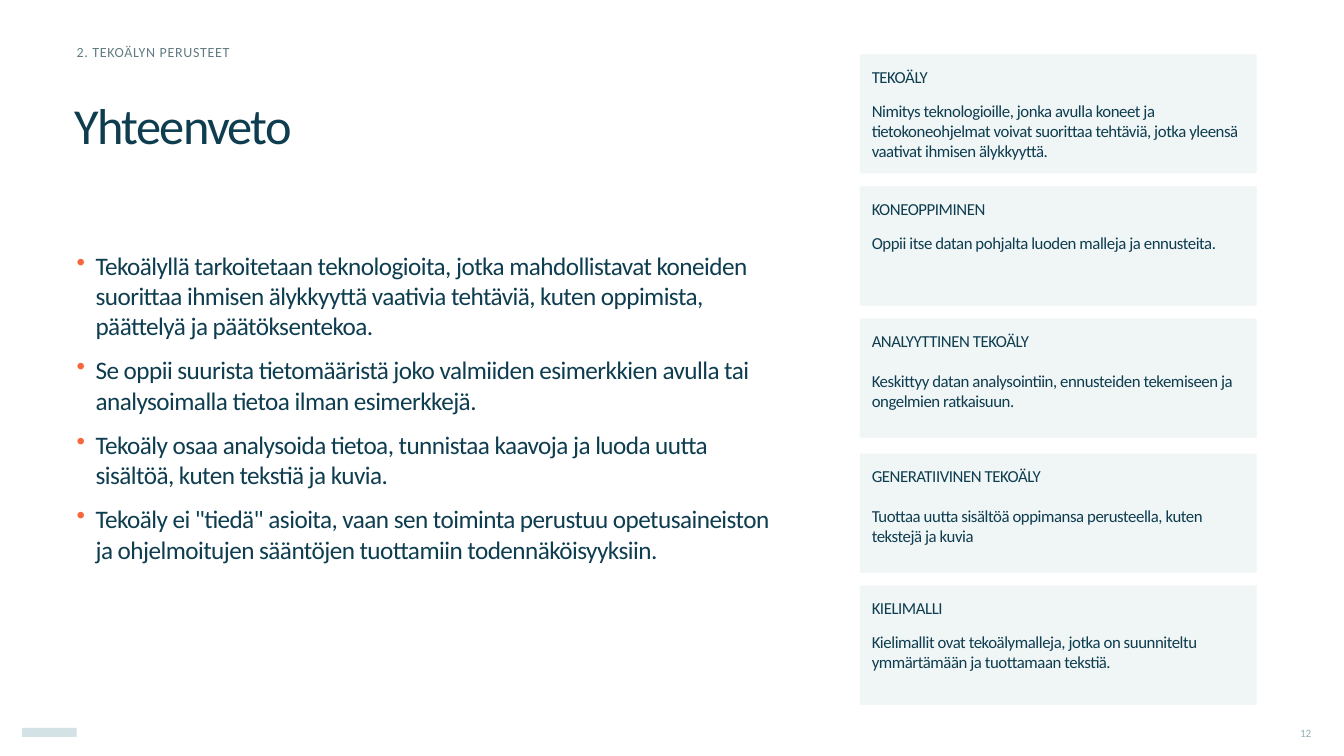
from lxml.etree import SubElement
from pptx import Presentation
from pptx.dml.color import RGBColor
from pptx.enum.shapes import MSO_SHAPE
from pptx.enum.text import MSO_ANCHOR, PP_ALIGN
from pptx.oxml.ns import qn
from pptx.util import Cm, Pt

FONT = "Calibri"
NAVY = RGBColor(0x0E, 0x3D, 0x50)
SLATE = RGBColor(0x63, 0x7C, 0x83)
MIST = RGBColor(0x92, 0xB1, 0xB8)
PALE = RGBColor(0xD3, 0xE3, 0xE5)
CARD = RGBColor(0xF0, 0xF5, 0xF5)
ORANGE = RGBColor(0xF7, 0x67, 0x3B)

CARD_LEFT, CARD_TOP, CARD_GAP = 21.67, 1.37, 0.33
CARD_INSET = 0.3

SUMMARY = [
    "Tekoälyllä tarkoitetaan teknologioita, jotka mahdollistavat koneiden suorittaa ihmisen "
    "älykkyyttä vaativia tehtäviä, kuten oppimista, päättelyä ja päätöksentekoa.",
    "Se oppii suurista tietomääristä joko valmiiden esimerkkien avulla tai analysoimalla "
    "tietoa ilman esimerkkejä.",
    "Tekoäly osaa analysoida tietoa, tunnistaa kaavoja ja luoda uutta sisältöä, kuten "
    "tekstiä ja kuvia.",
    'Tekoäly ei "tiedä" asioita, vaan sen toiminta perustuu opetusaineiston ja ohjelmoitujen '
    "sääntöjen tuottamiin todennäköisyyksiin.",
]

# Term, definition, card height in cm, gap before the definition in points
TERMS = [
    ("TEKOÄLY",
     "Nimitys teknologioille, jonka avulla koneet ja tietokoneohjelmat voivat suorittaa "
     "tehtäviä, jotka yleensä vaativat ihmisen älykkyyttä.", 3, 10),
    ("KONEOPPIMINEN",
     "Oppii itse datan pohjalta luoden malleja ja ennusteita.", 3, 10),
    ("ANALYYTTINEN TEKOÄLY",
     "Keskittyy datan analysointiin, ennusteiden tekemiseen ja ongelmien ratkaisuun.",
     3.07, 14.5),
    ("GENERATIIVINEN TEKOÄLY",
     "Tuottaa uutta sisältöä oppimansa perusteella, kuten tekstejä ja kuvia", 3, 14.5),
    ("KIELIMALLI",
     "Kielimallit ovat tekoälymalleja, jotka on suunniteltu ymmärtämään ja tuottamaan "
     "tekstiä.", 3, 10),
]


def add_bullet(para):
    properties = para._p.get_or_add_pPr()
    properties.set("marL", str(Cm(0.48)))
    properties.set("indent", str(-Cm(0.48)))
    color = SubElement(properties, qn("a:buClr"))
    SubElement(color, qn("a:srgbClr")).set("val", str(ORANGE))
    SubElement(properties, qn("a:buChar")).set("char", "•")


def write(shape, texts, size, color=NAVY, tracking=0, gap=0, line_spacing=None,
          align=PP_ALIGN.LEFT, anchor=MSO_ANCHOR.TOP, inset=0, bullets=False):
    """Fill a shape with one paragraph per text; gap and tracking are in points."""
    frame = shape.text_frame
    frame.word_wrap = True
    frame.vertical_anchor = anchor
    frame.margin_left = frame.margin_right = Cm(inset)
    frame.margin_top = frame.margin_bottom = Cm(inset)
    for index, text in enumerate(texts):
        para = frame.add_paragraph() if index else frame.paragraphs[0]
        if bullets:
            add_bullet(para)
        para.alignment = align
        para.line_spacing = line_spacing
        if index:
            para.space_before = Pt(gap)
        span = para.add_run()
        span.text = text
        span.font.name = FONT
        span.font.size = Pt(size)
        span.font.color.rgb = color
        span._r.get_or_add_rPr().set("spc", str(round(tracking * 100)))


def add_text(page, left, top, width, height, texts, size, **text_format):
    box = page.shapes.add_textbox(Cm(left), Cm(top), Cm(width), Cm(height))
    write(box, texts, size, **text_format)


def paint(shape, color):
    shape.shadow.inherit = False
    shape.fill.solid()
    shape.fill.fore_color.rgb = color
    shape.line.fill.background()


def add_card(page, top, height, term, definition, gap):
    """Draw a card with slightly uneven sides, holding a term and its definition."""
    outline = [(0, 0), (10.21, 0), (10.21, 0.59 * height), (10.24, height),
               (0.05, height), (0, 0.51 * height)]
    builder = page.shapes.build_freeform(*outline[0], scale=Cm(1))
    builder.add_line_segments(outline[1:], close=True)
    card = builder.convert_to_shape(Cm(CARD_LEFT), Cm(top))
    paint(card, CARD)
    write(card, [term, definition], 12, tracking=-0.3, gap=gap, inset=CARD_INSET)


def add_footer(page):
    mark = page.shapes.add_shape(MSO_SHAPE.RECTANGLE, Cm(0.56), Cm(18.34), Cm(1.37), Cm(0.23))
    paint(mark, PALE)
    add_text(page, 31.93, 18.21, 1.12, 0.51, ["12"], 8, color=MIST,
             align=PP_ALIGN.RIGHT, anchor=MSO_ANCHOR.MIDDLE)


def main():
    deck = Presentation()
    deck.slide_width, deck.slide_height = Cm(33.87), Cm(19.05)
    page = deck.slides.add_slide(deck.slide_layouts[6])

    add_footer(page)
    add_text(page, 1.88, 1.73, 20.09, 3, ["Yhteenveto"], 36, tracking=-1.2,
             line_spacing=0.9, anchor=MSO_ANCHOR.MIDDLE)
    add_text(page, 1.93, 0.94, 20.02, 0.74, ["2. TEKOÄLYN PERUSTEET"], 10, color=SLATE,
             tracking=0.5, anchor=MSO_ANCHOR.MIDDLE)
    add_text(page, 1.93, 6.3, 17.5, 11.1, SUMMARY, 18, tracking=-0.4, gap=10, bullets=True)

    top = CARD_TOP
    for term, definition, height, gap in TERMS:
        add_card(page, top, height, term, definition, gap)
        top += height + CARD_GAP

    deck.save("out.pptx")


if __name__ == "__main__":
    main()
